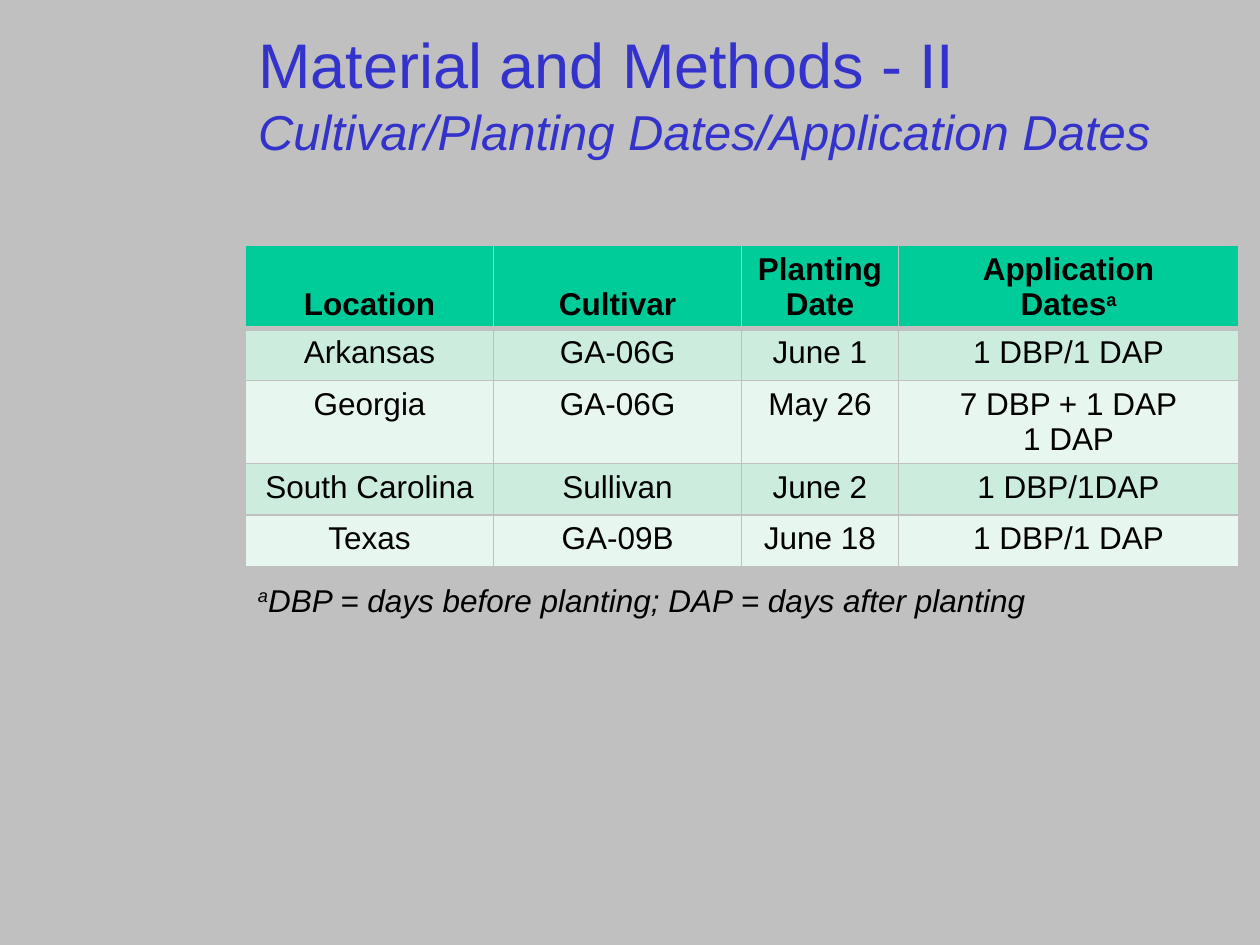
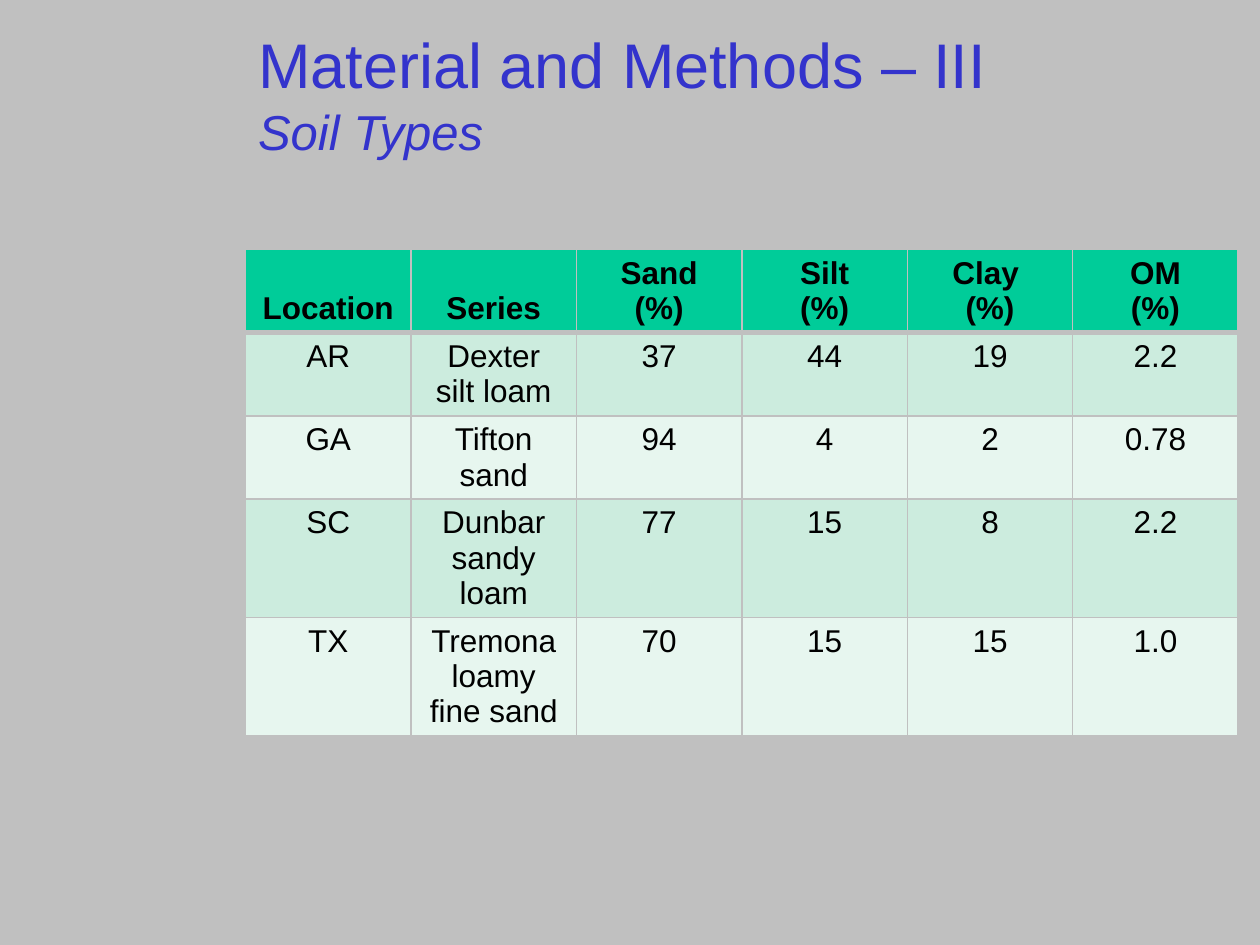
from lxml import etree
from pptx import Presentation
from pptx.dml.color import RGBColor
from pptx.enum import text
from pptx.oxml import ns
from pptx.util import Cm, Pt

BACKGROUND, TITLE_BLUE, BLACK = "C0C0C0", "3333CC", "000000"
HEADER_GREEN, BAND_COLORS = "00CC99", ("CCECDE", "E7F6EF")
LEFT = Cm(4.95)

SLIDES = [
    {
        "title": "Material and Methods - II",
        "subtitle": "Cultivar/Planting Dates/Application Dates",
        "top": 4.95,
        "columns": [5, 5, 3.16, 6.86],
        "heights": [1.65, 1.04, 1.67, 1.04, 1.04],
        "rows": [
            ["Location", "Cultivar", "Planting\nDate", "Application\nDates|a"],
            ["Arkansas", "GA-06G", "June 1", "1 DBP/1 DAP"],
            ["Georgia", "GA-06G", "May 26", "7 DBP + 1 DAP\n1 DAP"],
            ["South Carolina", "Sullivan", "June 2", "1 DBP/1DAP"],
            ["Texas", "GA-09B", "June 18", "1 DBP/1 DAP"],
        ],
        "footnote": "|a|DBP = days before planting; DAP = days after planting",
    },
    {
        "title": "Material and Methods – III",
        "subtitle": "Soil Types",
        "top": 5.03,
        "columns": [3.335] * 6,
        "heights": [1.65, 1.67, 1.67, 2.38, 2.38],
        "rows": [
            ["Location", "Series", "Sand\n(%)", "Silt\n(%)", "Clay \n(%)", "OM\n(%)"],
            ["AR", "Dexter\nsilt loam", "37", "44", "19", "2.2"],
            ["GA", "Tifton\nsand", "94", "4", "2", "0.78"],
            ["SC", "Dunbar\nsandy loam", "77", "15", "8", "2.2"],
            ["TX", "Tremona\nloamy fine sand", "70", "15", "15", "1.0"],
        ],
        "footnote": None,
    },
]


def color(hex_string):
    return RGBColor.from_string(hex_string)


def add_runs(paragraph, content, size=18, hex_color=BLACK, bold=False, italic=False):
    """Add content as runs; every second part between bars is superscript."""
    for index, part in enumerate(content.split("|")):
        if not part:
            continue
        run = paragraph.add_run()
        run.text = part
        run.font.name = "Arial"
        run.font.size = Pt(size)
        run.font.bold = bold
        run.font.italic = italic
        run.font.color.rgb = color(hex_color)
        if index % 2:
            run._r.get_or_add_rPr().set("baseline", "30000")


presentation = Presentation()
presentation.slide_width, presentation.slide_height = Cm(25.4), Cm(19.05)
background = presentation.slide_master.background.fill
background.solid()
background.fore_color.rgb = color(BACKGROUND)
title_only = presentation.slide_layouts[5]

for content in SLIDES:
    slide = presentation.slides.add_slide(title_only)

    title = slide.shapes.title
    title.left, title.top, title.width, title.height = LEFT, Cm(0.28), Cm(20.24), Cm(3.18)
    title.text_frame.auto_size = text.MSO_AUTO_SIZE.NONE
    title.text_frame.vertical_anchor = text.MSO_ANCHOR.MIDDLE
    heading = title.text_frame.paragraphs[0]
    heading.alignment = text.PP_ALIGN.LEFT
    add_runs(heading, content["title"], 36, TITLE_BLUE)
    heading.add_line_break()
    add_runs(heading, content["subtitle"], 28, TITLE_BLUE, italic=True)

    rows, columns, heights = content["rows"], content["columns"], content["heights"]
    table = slide.shapes.add_table(
        len(rows), len(columns), LEFT, Cm(content["top"]),
        Cm(sum(columns)), Cm(sum(heights))).table
    table.first_row = table.horz_banding = False
    for column, width in zip(table.columns, columns):
        column.width = Cm(width)

    for row_index, (row, height, values) in enumerate(zip(table.rows, heights, rows)):
        is_header = row_index == 0
        row.height = Cm(height)
        for cell, value in zip(row.cells, values):
            cell.vertical_anchor = text.MSO_ANCHOR.BOTTOM if is_header else text.MSO_ANCHOR.TOP
            for line_index, line in enumerate(value.split("\n")):
                frame = cell.text_frame
                paragraph = frame.add_paragraph() if line_index else frame.paragraphs[0]
                paragraph.alignment = text.PP_ALIGN.CENTER
                add_runs(paragraph, line, bold=is_header)

            properties = cell._tc.get_or_add_tcPr()
            for side in "LRTB":
                thick = (is_header and side == "B") or (row_index == 1 and side == "T")
                border = etree.SubElement(
                    properties, ns.qn(f"a:ln{side}"), w=str(Pt(3 if thick else 1)))
                fill = etree.SubElement(border, ns.qn("a:solidFill"))
                etree.SubElement(fill, ns.qn("a:srgbClr"), val=BACKGROUND)
            cell.fill.solid()
            cell.fill.fore_color.rgb = color(
                HEADER_GREEN if is_header else BAND_COLORS[(row_index - 1) % 2])

    if content["footnote"]:
        footnote = slide.shapes.add_textbox(LEFT, Cm(11.58), Cm(16.3), Cm(1.02))
        footnote.text_frame.word_wrap = False
        footnote.text_frame.auto_size = text.MSO_AUTO_SIZE.SHAPE_TO_FIT_TEXT
        add_runs(footnote.text_frame.paragraphs[0], content["footnote"], italic=True)

presentation.save("out.pptx")
